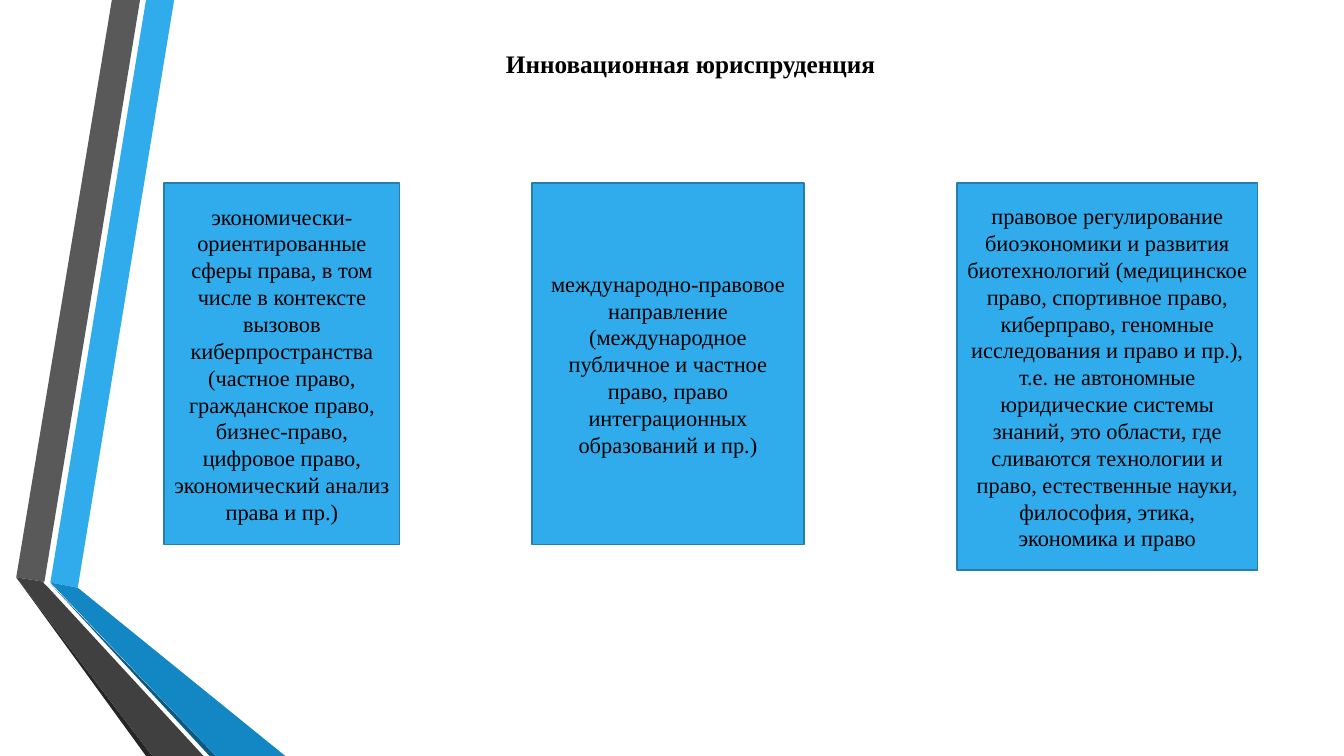
from pptx import Presentation
from pptx.dml.color import RGBColor
from pptx.enum.shapes import MSO_SHAPE
from pptx.enum.text import MSO_ANCHOR, PP_ALIGN
from pptx.util import Cm, Pt

RECTANGLE = MSO_SHAPE.RECTANGLE
MIDDLE = MSO_ANCHOR.MIDDLE
CENTER = PP_ALIGN.CENTER

BLACK = RGBColor(0x00, 0x00, 0x00)
BLUE = RGBColor(0x30, 0xAC, 0xEC)
BLUE_BORDER = RGBColor(0x24, 0x7F, 0xAF)
BLUE_FOLD = RGBColor(0x12, 0x87, 0xC3)
BLUE_SHADE = RGBColor(0x0C, 0x5A, 0x82)
GRAY = RGBColor(0x59, 0x59, 0x59)
GRAY_FOLD = RGBColor(0x40, 0x40, 0x40)
GRAY_SHADE = RGBColor(0x26, 0x26, 0x26)

FONT = "Times New Roman"
SLIDE_WIDTH, SLIDE_HEIGHT = 33.87, 19.05
BOX_TOP = 4.62

# Ribbon corners in centimetres, from back to front
RIBBONS = [
    (BLUE, [(1.27, 14.68), (1.96, 14.81), (4.39, 0), (3.68, 0)]),
    (GRAY, [(3.53, 0), (2.82, 0), (0.41, 14.55), (1.12, 14.66)]),
    (GRAY_SHADE, [(0.41, 14.55), (3.68, SLIDE_HEIGHT), (3.84, SLIDE_HEIGHT)]),
    (BLUE_SHADE, [(1.27, 14.71), (5.28, SLIDE_HEIGHT), (5.44, SLIDE_HEIGHT)]),
    (BLUE_FOLD, [(1.27, 14.68), (5.44, SLIDE_HEIGHT), (7.19, SLIDE_HEIGHT),
                 (1.96, 14.81)]),
    (GRAY_FOLD, [(5.13, SLIDE_HEIGHT), (1.22, 14.81), (1.09, 14.68),
                 (1.12, 14.66), (0.41, 14.55), (3.84, SLIDE_HEIGHT)]),
]

# Left, width, height in centimetres, and text of each direction
DIRECTIONS = [
    (4.14, 5.93, 9.1,
     "экономически-ориентированные сферы права, в том числе в контексте "
     "вызовов киберпространства (частное право, гражданское право, "
     "бизнес-право, цифровое право, экономический анализ права и пр.)"),
    (13.4, 6.87, 9.1,
     "международно-правовое направление (международное публичное и частное "
     "право, право интеграционных образований и пр.)"),
    (24.12, 7.57, 9.75,
     "правовое регулирование биоэкономики и развития биотехнологий "
     "(медицинское право, спортивное право, киберправо, геномные исследования "
     "и право и пр.), т.е. не автономные юридические системы знаний, это "
     "области, где сливаются технологии и право, естественные науки, "
     "философия, этика, экономика и право"),
]


def add_ribbon(slide, color, corners):
    start, *rest = [(Cm(x), Cm(y)) for x, y in corners]
    outline = slide.shapes.build_freeform(*start)
    outline.add_line_segments(rest, close=True)
    ribbon = outline.convert_to_shape()
    ribbon.shadow.inherit = False
    ribbon.fill.solid()
    ribbon.fill.fore_color.rgb = color
    ribbon.line.fill.background()


def write_centered(frame, text, size, bold=False):
    frame.word_wrap = True
    paragraph = frame.paragraphs[0]
    paragraph.text = text
    paragraph.alignment = CENTER
    paragraph.font.name = FONT
    paragraph.font.size = Pt(size)
    paragraph.font.bold = bold
    paragraph.font.color.rgb = BLACK
    return paragraph


def add_title(slide, text):
    title = slide.shapes.add_textbox(Cm(3), Cm(1.04), Cm(27.61), Cm(1.9))
    paragraph = write_centered(title.text_frame, text, 18, bold=True)
    paragraph.line_spacing = 1.07
    # First-line indent
    paragraph._p.get_or_add_pPr().set("indent", str(Cm(1.2)))


def add_direction(slide, left, width, height, text):
    box = slide.shapes.add_shape(
        RECTANGLE, Cm(left), Cm(BOX_TOP), Cm(width), Cm(height))
    box.shadow.inherit = False
    box.fill.solid()
    box.fill.fore_color.rgb = BLUE
    box.line.color.rgb = BLUE_BORDER
    box.line.width = Pt(1.25)
    box.text_frame.vertical_anchor = MIDDLE
    write_centered(box.text_frame, text, 16)


def main():
    presentation = Presentation()
    presentation.slide_width = Cm(SLIDE_WIDTH)
    presentation.slide_height = Cm(SLIDE_HEIGHT)
    slide = presentation.slides.add_slide(presentation.slide_layouts[6])

    # Folded ribbons on the left
    for color, corners in RIBBONS:
        add_ribbon(slide, color, corners)

    # Heading and the three directions
    add_title(slide, "Инновационная юриспруденция")
    for direction in DIRECTIONS:
        add_direction(slide, *direction)

    presentation.save("out.pptx")


if __name__ == "__main__":
    main()
